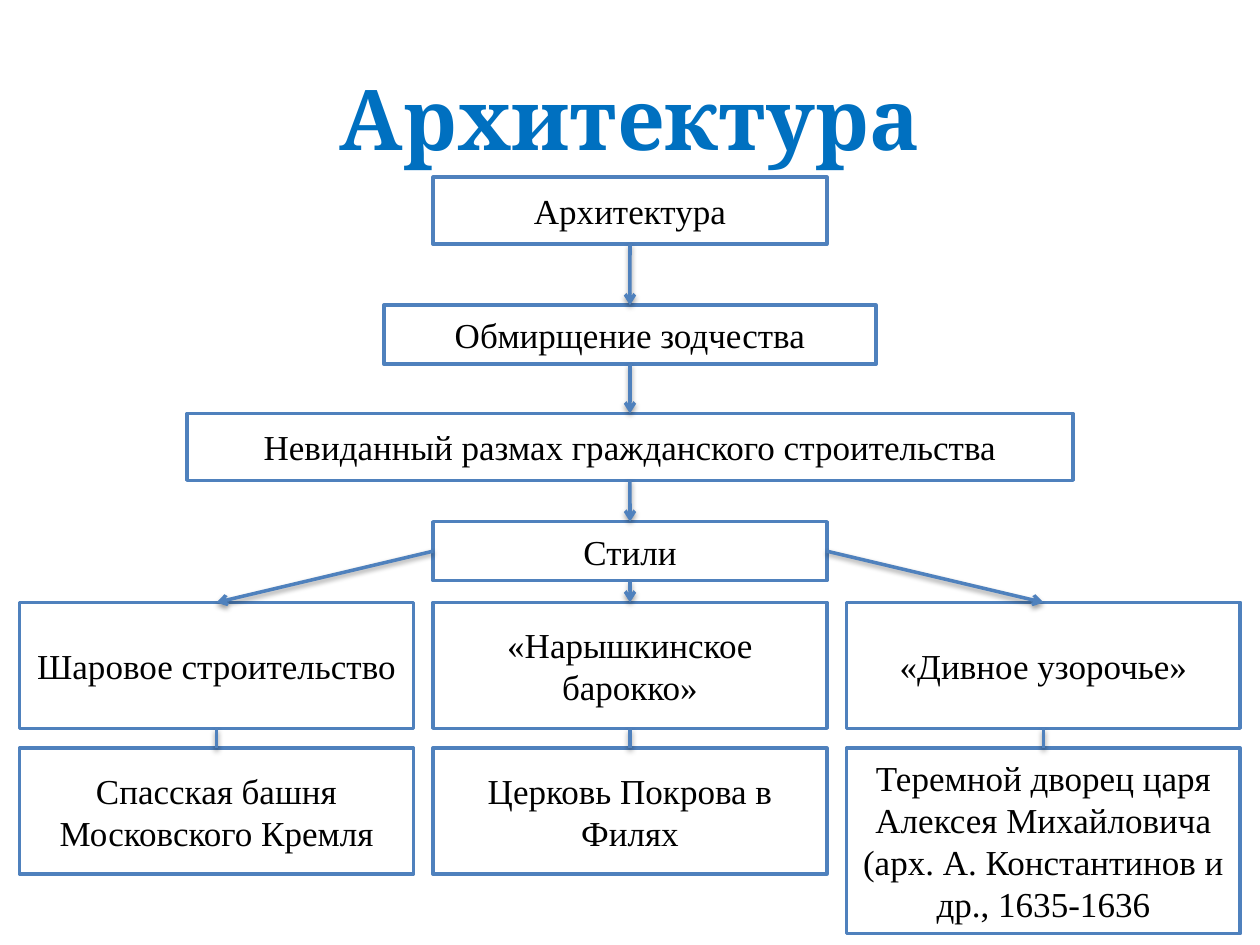
from lxml.etree import SubElement
from pptx import Presentation
from pptx.dml.color import RGBColor
from pptx.enum.shapes import MSO_CONNECTOR, MSO_SHAPE
from pptx.enum.text import MSO_ANCHOR, PP_ALIGN
from pptx.oxml import parse_xml
from pptx.oxml.ns import nsdecls, qn
from pptx.util import Pt

# Content
TITLE = "Архитектура"
CHAIN = [  # text, top, width, height
    ("Архитектура", 101.25, 225, 38.25),
    ("Обмирщение зодчества", 174.4, 281.25, 33.75),
    ("Невиданный размах гражданского строительства", 236.25, 506.25, 38.25),
    ("Стили", 298.1, 225, 33.75),
]
STYLES = [  # style, example, example height
    ("Шаровое строительство", "Спасская башня Московского Кремля", 72),
    ("«Нарышкинское барокко»", "Церковь Покрова в Филях", 72),
    ("«Дивное узорочье»",
     "Теремной дворец царя Алексея Михайловича "
     "(арх. А. Константинов и др., 1635-1636", 106),
]
COLORS = {"title": "0070C0", "line": "4F81BD", "box": "FFFFFF",
          "text": "000000", "shadow": "000000"}

# Layout
CENTER = 360
COLUMN_WIDTH, COLUMN_PITCH = 225, 236.25
STYLE_TOP, STYLE_HEIGHT, EXAMPLE_TOP = 344.25, 72, 427.5
TOP, LEFT, BOTTOM, RIGHT = range(4)

SHADOW = (
    f'<a:effectLst {nsdecls("a")}>'
    f'<a:outerShdw blurRad="{Pt(3.1)}" dist="{Pt(1.6)}" dir="5400000" rotWithShape="0">'
    f'<a:srgbClr val="{COLORS["shadow"]}"><a:alpha val="38000"/></a:srgbClr>'
    '</a:outerShdw></a:effectLst>'
)

prs = Presentation()
prs.slide_width, prs.slide_height = Pt(720), Pt(540)
slide = prs.slides.add_slide(prs.slide_layouts[6])


def rgb(name):
    return RGBColor.from_string(COLORS[name])


def write(frame, text, font_name, size, color, bold=False):
    frame.text = text
    frame.word_wrap = True
    frame.vertical_anchor = MSO_ANCHOR.MIDDLE
    paragraph = frame.paragraphs[0]
    paragraph.alignment = PP_ALIGN.CENTER
    font = paragraph.runs[0].font
    font.name, font.size, font.bold = font_name, Pt(size), bold
    font.color.rgb = rgb(color)


def add_box(text, center, top, width, height):
    box = slide.shapes.add_shape(MSO_SHAPE.RECTANGLE, Pt(center - width / 2),
                                 Pt(top), Pt(width), Pt(height))
    box.shadow.inherit = False
    box.fill.solid()
    box.fill.fore_color.rgb = rgb("box")
    box.line.color.rgb = rgb("line")
    box.line.width = Pt(2)
    write(box.text_frame, text, "Times New Roman", 20, "text")
    return box


def join(start, end, start_side=BOTTOM, arrow=True):
    link = slide.shapes.add_connector(MSO_CONNECTOR.STRAIGHT, 0, 0, 0, 0)
    link.begin_connect(start, start_side)
    link.end_connect(end, TOP)
    link.line.color.rgb = rgb("line")
    link.line.width = Pt(2)
    properties = link._element.spPr
    if arrow:
        SubElement(properties.find(qn("a:ln")), qn("a:tailEnd"), type="arrow")
    properties.append(parse_xml(SHADOW))


# Title
title = slide.shapes.add_textbox(Pt(36), Pt(21.6), Pt(648), Pt(90))
write(title.text_frame, TITLE, "Cambria", 48, "title", bold=True)

# Central chain
chain = [add_box(text, CENTER, top, width, height)
         for text, top, width, height in CHAIN]
for upper, lower in zip(chain, chain[1:]):
    join(upper, lower)

# Styles with their examples
for column, (style, example, example_height) in enumerate(STYLES):
    center = CENTER + (column - 1) * COLUMN_PITCH
    style_box = add_box(style, center, STYLE_TOP, COLUMN_WIDTH, STYLE_HEIGHT)
    example_box = add_box(example, center, EXAMPLE_TOP, COLUMN_WIDTH, example_height)
    join(chain[-1], style_box, (LEFT, BOTTOM, RIGHT)[column])
    join(style_box, example_box, arrow=False)

prs.save("out.pptx")
